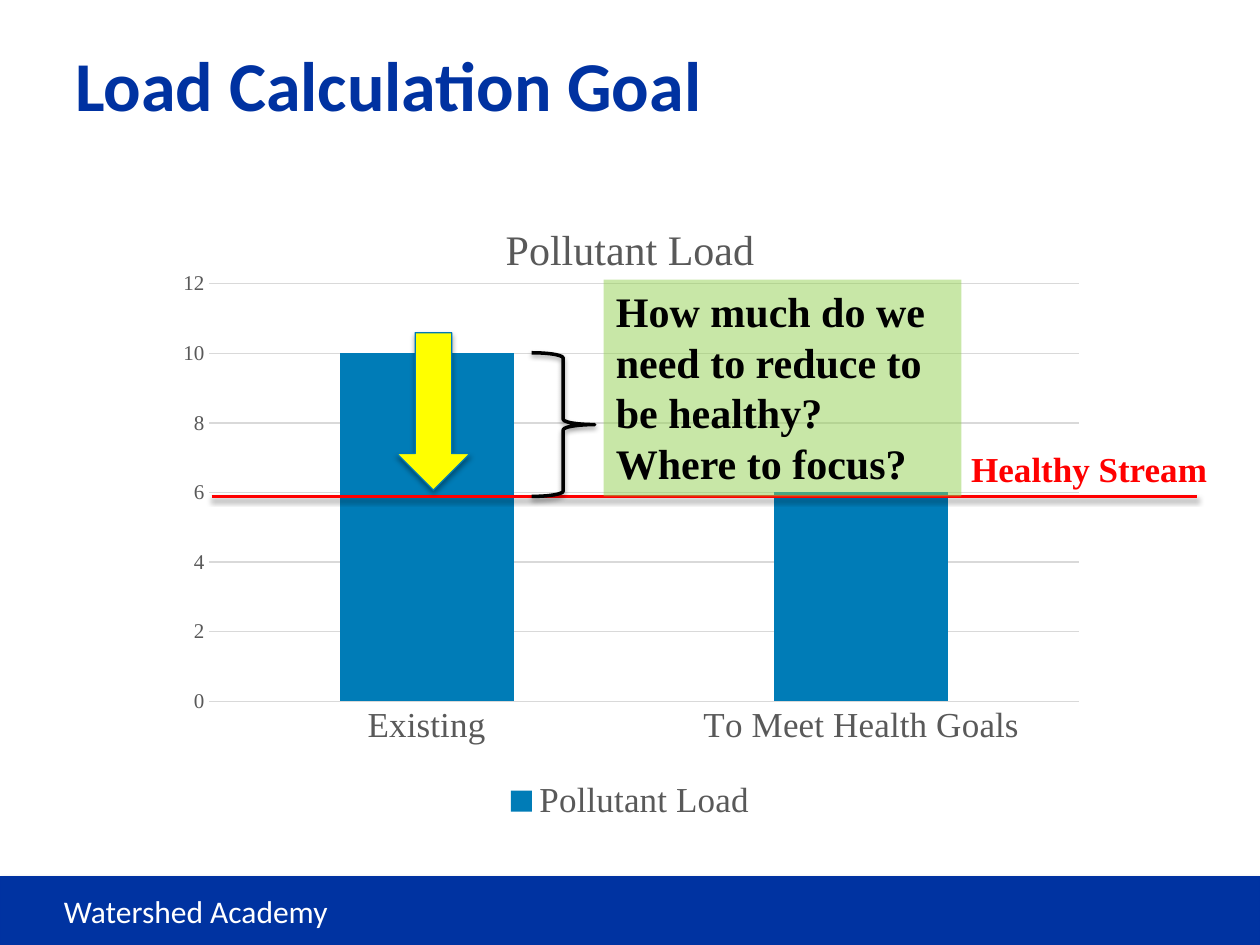
from lxml import etree
from pptx import Presentation
from pptx import util as u
from pptx.chart.data import CategoryChartData
from pptx.dml.color import RGBColor
from pptx.enum import chart as charts, shapes, text
from pptx.oxml import parse_xml
from pptx.oxml.ns import nsdecls, qn

BLUE = "0032A1"
GRAY = "595959"
GRID = "D9D9D9"
SERIF = "Times New Roman"
SANS = "Calibri"


def color(value):
    return RGBColor.from_string(value)


class SlideBuilder:
    def __init__(self, slide):
        self.slide = slide

    def set_font(self, font, size, value, name=SERIF, bold=False):
        font.size = u.Pt(size)
        font.name = name
        font.bold = bold
        font.color.rgb = color(value)

    def set_line(self, line, value, width):
        line.color.rgb = color(value)
        line.width = u.Pt(width)

    def set_fill(self, fill, value, opacity=100):
        fill.solid()
        fill.fore_color.rgb = color(value)
        if opacity < 100:
            target = fill._xPr.find(qn("a:solidFill"))[0]
            etree.SubElement(target, qn("a:alpha"), val=str(opacity * 1000))

    def add_shadow(self, shape, opacity, distance):
        properties = shape._element.spPr
        for effects in properties.findall(qn("a:effectLst")):
            properties.remove(effects)
        properties.append(parse_xml(
            f'<a:effectLst {nsdecls("a")}>'
            f'<a:outerShdw blurRad="{u.Pt(3.1)}" dist="{u.Pt(distance)}" '
            'dir="5400000" rotWithShape="0"><a:srgbClr val="000000">'
            f'<a:alpha val="{opacity * 1000}"/></a:srgbClr>'
            '</a:outerShdw></a:effectLst>'))

    def shape(self, kind, box, fill, line, width, opacity=35, distance=1.8):
        shape = self.slide.shapes.add_shape(kind, *map(u.Inches, box))
        if fill:
            self.set_fill(shape.fill, fill)
        else:
            shape.fill.background()
        self.set_line(shape.line, line, width)
        self.add_shadow(shape, opacity, distance)
        return shape

    def line(self, start, end, value, width):
        connector = self.slide.shapes.add_connector(
            shapes.MSO_CONNECTOR.STRAIGHT,
            *map(u.Inches, start), *map(u.Inches, end))
        self.set_line(connector.line, value, width)
        self.add_shadow(connector, 38, 1.6)
        return connector

    def text(self, box, content, size, value, name=SERIF, bold=False,
             anchor=text.MSO_ANCHOR.TOP):
        shape = self.slide.shapes.add_textbox(*map(u.Inches, box))
        frame = shape.text_frame
        frame.text = content
        frame.word_wrap = True
        frame.vertical_anchor = anchor
        for paragraph in frame.paragraphs:
            for run in paragraph.runs:
                self.set_font(run.font, size, value, name, bold)
        return shape

    def column_chart(self, box, title, categories, values, fill, plot_area):
        data = CategoryChartData()
        data.categories = categories
        data.add_series(title, values)
        chart = self.slide.shapes.add_chart(
            charts.XL_CHART_TYPE.COLUMN_STACKED,
            *map(u.Inches, box), data).chart
        self.set_font(chart.font, 10, "000000")

        chart.has_title = True
        chart.chart_title.include_in_layout = False
        frame = chart.chart_title.text_frame
        frame.text = title
        self.set_font(frame.paragraphs[0].runs[0].font, 24, GRAY)

        chart.has_legend = True
        chart.legend.position = charts.XL_LEGEND_POSITION.BOTTOM
        chart.legend.include_in_layout = False
        self.set_font(chart.legend.font, 20, GRAY)

        for axis, size in ((chart.category_axis, 20), (chart.value_axis, 12)):
            axis.major_tick_mark = charts.XL_TICK_MARK.NONE
            axis.minor_tick_mark = charts.XL_TICK_MARK.NONE
            self.set_font(axis.tick_labels.font, size, GRAY)
        self.set_line(chart.category_axis.format.line, GRID, 0.75)
        chart.value_axis.format.line.fill.background()
        chart.value_axis.minimum_scale = 0
        chart.value_axis.maximum_scale = 12
        chart.value_axis.major_unit = 2
        self.set_line(chart.value_axis.major_gridlines.format.line, GRID, 0.75)

        plot = chart.plots[0]
        plot.gap_width = 150
        plot.overlap = 100
        plot.vary_by_categories = False
        self.set_fill(plot.series[0].format.fill, fill)
        self.place_plot(chart, plot_area)
        return chart

    def place_plot(self, chart, plot_area):
        area = chart._chartSpace.chart.plotArea
        for layout in area.findall(qn("c:layout")):
            area.remove(layout)
        settings = [("layoutTarget", "inner"), ("xMode", "edge"),
                    ("yMode", "edge"), *zip("xywh", plot_area)]
        entries = "".join(f'<c:{tag} val="{value}"/>' for tag, value in settings)
        area.insert(0, parse_xml(
            f'<c:layout {nsdecls("c")}><c:manualLayout>{entries}'
            '</c:manualLayout></c:layout>'))


def main():
    presentation = Presentation()
    presentation.slide_width = u.Inches(10)
    presentation.slide_height = u.Inches(7.5)
    slide = presentation.slides.add_slide(presentation.slide_layouts[6])
    builder = SlideBuilder(slide)
    kinds = shapes.MSO_SHAPE
    healthy_level = 3.94

    builder.shape(kinds.RECTANGLE, (0, 6.96, 10, 0.54), "0033A1", BLUE, 0.75)
    builder.text((0.41, 7.03, 3.36, 0.41), "Watershed Academy", 18, "FFFFFF", SANS)
    builder.text((0.5, 0.04, 9, 1.25), "Load Calculation Goal", 40, BLUE, SANS,
                 True, text.MSO_ANCHOR.MIDDLE)

    builder.column_chart((1.29, 1.55, 7.42, 5.02), "Pollutant Load",
                         ("Existing", "To Meet Health Goals"), (10, 6),
                         "007CB7", (0.05, 0.14, 0.93, 0.66))

    builder.line((1.68, healthy_level), (9.5, healthy_level), "FF0000", 2)
    builder.shape(kinds.DOWN_ARROW, (3.15, 2.64, 0.58, 1.25),
                  "FFFF00", "0079B3", 0.75)
    builder.shape(kinds.RIGHT_BRACE, (4.22, 2.8, 0.5, healthy_level - 2.8),
                  None, "000000", 2, 38, 1.6)

    question = builder.text(
        (4.79, 2.22, 2.84, healthy_level - 2.22),
        "How much do we need to reduce to be healthy?\nWhere to focus?",
        24, "000000", bold=True)
    builder.set_fill(question.fill, "92D050", 50)
    builder.text((7.61, 3.5, 2.26, 0.44), "Healthy Stream", 20, "FF0000", bold=True)

    presentation.save("out.pptx")


if __name__ == "__main__":
    main()
